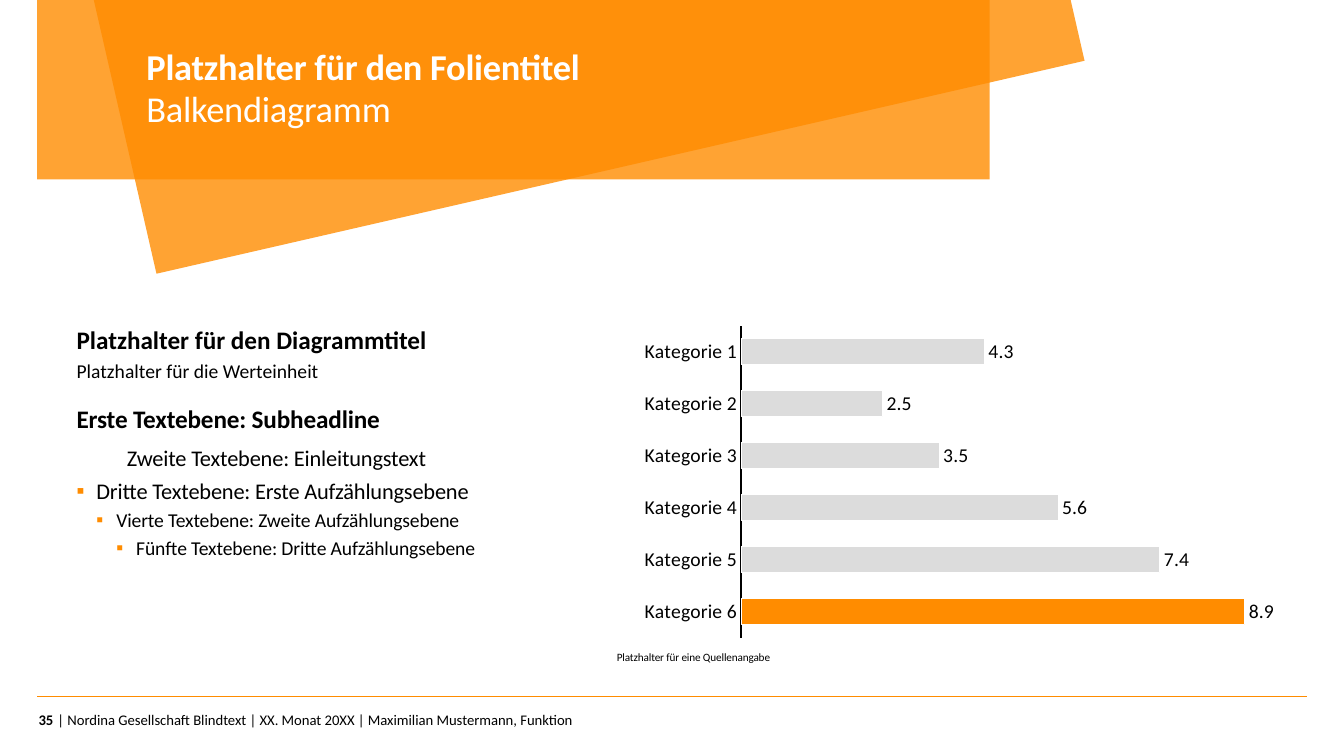
from lxml import etree
from pptx import Presentation
from pptx import util as u
from pptx.chart.data import CategoryChartData
from pptx.dml.color import RGBColor
from pptx.enum import chart as ch, shapes, text
from pptx.oxml import parse_xml
from pptx.oxml.ns import nsdecls, qn

ORANGE = RGBColor(0xFF, 0x8C, 0x00)
GREY = RGBColor(0xDC, 0xDC, 0xDC)
BLACK = RGBColor(0, 0, 0)
WHITE = RGBColor(0xFF, 0xFF, 0xFF)
FONT = "Calibri"
INDENT = 14.2


class Slide:
    """Holds the style and the current slide, with a method for each kind of element."""

    def __init__(self, prs):
        self.s = prs.slides.add_slide(prs.slide_layouts[5])

    def band(self, sp):
        sp.shadow.inherit = False
        sp.fill.solid()
        sp.fill.fore_color.rgb = ORANGE
        sp.line.fill.background()
        color = sp.fill._xPr.find(".//" + qn("a:srgbClr"))
        etree.SubElement(color, qn("a:alpha")).set("val", "80000")

    def rect(self, *box):
        self.band(self.s.shapes.add_shape(shapes.MSO_SHAPE.RECTANGLE, *map(u.Pt, box)))

    def polygon(self, *points):
        first, *rest = [(u.Pt(x), u.Pt(y)) for x, y in points]
        builder = self.s.shapes.build_freeform(*first)
        builder.add_line_segments(rest, close=True)
        self.band(builder.convert_to_shape())

    def rule(self, *ends):
        line = self.s.shapes.add_connector(shapes.MSO_CONNECTOR.STRAIGHT, *map(u.Pt, ends))
        line.line.color.rgb = ORANGE
        line.line.width = u.Pt(1)
        etree.SubElement(line._element.spPr, qn("a:effectLst"))

    def frame(self, sp, anchor):
        tf = sp.text_frame
        tf.margin_left = tf.margin_right = tf.margin_top = tf.margin_bottom = 0
        tf.word_wrap = True
        tf.auto_size = text.MSO_AUTO_SIZE.NONE
        tf.vertical_anchor = anchor
        return tf

    def run(self, p, words, size, bold=False, color=BLACK, spacing=0):
        r = p.add_run()
        r.text = words
        r.font.name, r.font.size, r.font.bold = FONT, u.Pt(size), bold
        r.font.color.rgb = color
        if spacing:
            r._r.get_or_add_rPr().set("spc", str(spacing))

    def title(self, box, first, second):
        sp = self.s.shapes.title
        sp.left, sp.top, sp.width, sp.height = map(u.Pt, box)
        tree = sp.element.getparent()
        tree.append(sp.element)
        p = self.frame(sp, text.MSO_ANCHOR.MIDDLE).paragraphs[0]
        p.alignment, p.line_spacing = text.PP_ALIGN.LEFT, 0.95
        self.run(p, first, 26, True, WHITE, -20)
        p.add_line_break()
        self.run(p, second, 26, False, WHITE, -20)

    def text(self, box, words, size, bold=False, anchor=text.MSO_ANCHOR.TOP,
             align=text.PP_ALIGN.LEFT, leading=1.05, spacing=0):
        tf = self.frame(self.s.shapes.add_textbox(*map(u.Pt, box)), anchor)
        p = tf.paragraphs[0]
        p.alignment, p.line_spacing = align, leading
        self.run(p, words, size, bold, spacing=spacing)
        return tf

    def bullet(self, p, depth):
        pPr = p._p.get_or_add_pPr()
        pPr.set("marL", str(u.Pt(INDENT * depth)))
        pPr.set("indent", str(u.Pt(-INDENT)))
        color = etree.SubElement(pPr, qn("a:buClr"))
        etree.SubElement(color, qn("a:srgbClr")).set("val", str(ORANGE))
        etree.SubElement(pPr, qn("a:buFont")).set("typeface", FONT)
        etree.SubElement(pPr, qn("a:buChar")).set("char", "▪")

    def outline(self, box, heading, levels):
        tf = self.text(box, heading, 18, True, spacing=-10)
        for depth, (words, size, before) in enumerate(levels):
            p = tf.add_paragraph()
            if depth:
                self.bullet(p, depth)
            p.level = depth + 1
            p.line_spacing, p.space_before = 1.05, u.Pt(before)
            self.run(p, words, size, spacing=-10)

    def bars(self, box, values, layout):
        data = CategoryChartData(number_format="0.0")
        data.categories = [f"Kategorie {i}" for i in range(1, len(values) + 1)]
        data.add_series("Series 1", values)
        chart = self.s.shapes.add_chart(
            ch.XL_CHART_TYPE.BAR_CLUSTERED, *map(u.Pt, box), data).chart
        chart.has_legend = chart.has_title = False
        chart.font.name, chart.font.size = FONT, u.Pt(14)
        chart.font.color.rgb = BLACK
        cats, vals = chart.category_axis, chart.value_axis
        cats.reverse_order = True
        cats.major_tick_mark = cats.minor_tick_mark = ch.XL_TICK_MARK.NONE
        cats.format.line.color.rgb = BLACK
        cats.format.line.width = u.Pt(1)
        vals.minimum_scale, vals.maximum_scale, vals.major_unit = 0, 10, 2
        vals.has_major_gridlines = vals.visible = False
        plot = chart.plots[0]
        plot.gap_width, plot.vary_by_categories = 100, False
        series = plot.series[0]
        for fmt, color in ((series.format, GREY),
                           (series.points[len(values) - 1].format, ORANGE)):
            fmt.fill.solid()
            fmt.fill.fore_color.rgb = color
            fmt.line.color.rgb = WHITE
            fmt.line.width = u.Pt(0.75)
        plot.has_data_labels = True
        labels = plot.data_labels
        labels.show_value = True
        labels.number_format, labels.number_format_is_linked = "0.0", False
        labels.position = ch.XL_LABEL_POSITION.OUTSIDE_END
        area = chart._chartSpace.chart.plotArea
        for old in area.findall(qn("c:layout")):
            area.remove(old)
        sizes = "".join(f'<c:{k} val="{v}"/>' for k, v in zip("xywh", layout))
        area.insert(0, parse_xml(
            f'<c:layout {nsdecls("c")}><c:manualLayout><c:layoutTarget val="inner"/>'
            f'<c:xMode val="edge"/><c:yMode val="edge"/>{sizes}'
            '</c:manualLayout></c:layout>'))


def main():
    prs = Presentation()
    prs.slide_width, prs.slide_height = u.Pt(960), u.Pt(540)
    s = Slide(prs)
    s.rect(26.6, 0, 680.4, 128.2)
    s.polygon((67, 0), (111.8, 195.5), (774.7, 43.4), (764.8, 0))
    s.rule(26.6, 497.5, 933.8, 497.5)
    middle = text.MSO_ANCHOR.MIDDLE
    s.text((41, 507.6, 510.5, 13), "| Nordina Gesellschaft Blindtext | XX. Monat 20XX | "
           "Maximilian Mustermann, Funktion", 10.5, anchor=middle, leading=1)
    s.text((15.8, 507.6, 22.3, 13), "35", 10.5, True, middle, text.PP_ALIGN.RIGHT, 1)
    s.text((54.7, 255.6, 357, 17.3), "Platzhalter für die Werteinheit", 14)
    s.text((440.6, 464.4, 493.2, 10), "Platzhalter für eine Quellenangabe", 8,
           anchor=text.MSO_ANCHOR.BOTTOM, spacing=-10)
    s.text((54.7, 230.4, 357, 22.3), "Platzhalter für den Diagrammtitel", 18, True)
    s.outline((54.7, 287.3, 357, 187.2), "Erste Textebene: Subheadline", [
        ("Zweite Textebene: Einleitungstext", 16, 6),
        ("Dritte Textebene: Erste Aufzählungsebene", 16, 4),
        ("Vierte Textebene: Zweite Aufzählungsebene", 14, 2),
        ("Fünfte Textebene: Dritte Aufzählungsebene", 14, 2),
    ])
    s.title((104.6, 33.8, 581, 59.8), "Platzhalter für den Folientitel", "Balkendiagramm")
    s.bars((440.6, 230.4, 493.2, 229.7), (4.3, 2.5, 3.5, 5.6, 7.4, 8.9),
           (0.18, 0.01, 0.82, 0.97))
    prs.save("out.pptx")


if __name__ == "__main__":
    main()
